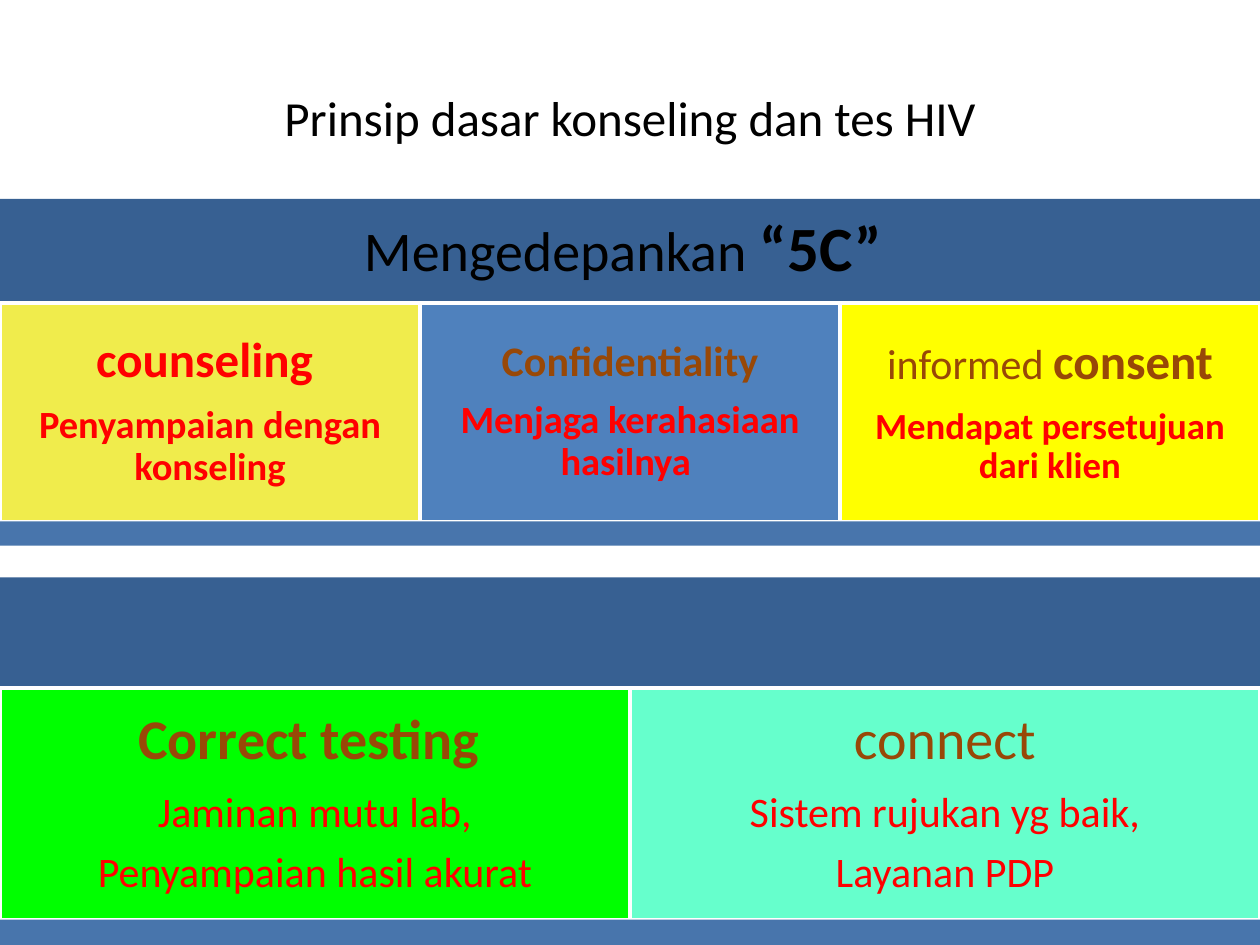
from typing import NamedTuple

from pptx import Presentation
from pptx.dml.color import RGBColor as Rgb
from pptx.enum.shapes import MSO_SHAPE as Kind
from pptx.enum.text import MSO_ANCHOR as Anchor, PP_ALIGN as Align
from pptx.util import Cm, Pt

WIDE, HIGH = 25.4, 19.05
FONT = "Calibri"
HUES = {
    "black": "000000", "white": "FFFFFF", "navy": "376092", "steel": "4875AC",
    "blue": "4F81BD", "straw": "F0EC4C", "yellow": "FFFF00", "green": "00FF00",
    "mint": "66FFCC", "brown": "984807", "red": "FF0000",
}


class Run(NamedTuple):
    text: str
    size: int
    hue: str
    bold: bool = False


class Card(NamedTuple):
    fill: str
    pad: float
    lines: list[list[Run]]


class Band(NamedTuple):
    top: float
    head: float
    body: float
    foot: float
    title: list[list[Run]]
    cards: list[Card]


BANDS = [
    Band(4.01, 2.1, 4.4, 0.49,
         [[Run("Mengedepankan ", 32, "black"), Run("“5C” ", 36, "black", True)]],
         [
             Card("straw", 0.3, [
                 [Run("counseling ", 28, "red", True)],
                 [Run("Penyampaian dengan konseling", 22, "red", True)]]),
             Card("blue", 0.25, [
                 [Run("Confidentiality", 24, "brown", True)],
                 [Run("Menjaga kerahasiaan hasilnya ", 22, "red", True)]]),
             Card("yellow", 0.25, [
                 [Run("informed ", 24, "brown"), Run("consent", 28, "brown", True)],
                 [Run("Mendapat persetujuan dari klien", 21, "red", True)]]),
         ]),
    Band(11.64, 2.23, 4.67, 0.51, [],
         [
             Card("green", 0.33, [
                 [Run("Correct testing ", 32, "brown", True)],
                 [Run("Jaminan mutu lab,", 24, "red")],
                 [Run("Penyampaian hasil akurat", 24, "red")]]),
             Card("mint", 0.33, [
                 [Run("connect", 32, "brown")],
                 [Run("Sistem rujukan yg baik,", 24, "red")],
                 [Run("Layanan PDP", 24, "red")]]),
         ]),
]


def color(hue: str) -> Rgb:
    return Rgb.from_string(HUES[hue])


def add_run(para, run: Run) -> None:
    part = para.add_run()
    part.text = run.text
    font = part.font
    font.name, font.size, font.bold = FONT, Pt(run.size), run.bold
    font.color.rgb = color(run.hue)


def write(frame, lines: list[list[Run]], pad: float) -> None:
    frame.word_wrap = True
    frame.vertical_anchor = Anchor.MIDDLE
    frame.margin_left = frame.margin_right = Cm(pad)
    frame.margin_top = frame.margin_bottom = Cm(pad)
    for i, line in enumerate(lines):
        para = frame.add_paragraph() if i else frame.paragraphs[0]
        para.alignment = Align.CENTER
        para.line_spacing = 0.9
        para.space_after = Pt(round(0.35 * max(run.size for run in line), 1))
        for run in line:
            add_run(para, run)


def add_box(slide, left: float, top: float, width: float, height: float,
            fill: str, edge: bool = False):
    box = slide.shapes.add_shape(
        Kind.RECTANGLE, Cm(left), Cm(top), Cm(width), Cm(height))
    box.shadow.inherit = False
    box.fill.solid()
    box.fill.fore_color.rgb = color(fill)
    if edge:
        box.line.color.rgb = color("white")
        box.line.width = Pt(2)
    else:
        box.line.fill.background()
    return box


def add_band(slide, band: Band) -> None:
    # Heading bar
    head = add_box(slide, 0, band.top, WIDE, band.head, "navy")
    if band.title:
        write(head.text_frame, band.title, 0.33)
    # Equal cards across the slide
    top = band.top + band.head
    width = WIDE / len(band.cards)
    for i, card in enumerate(band.cards):
        box = add_box(slide, i * width, top, width, band.body, card.fill, True)
        write(box.text_frame, card.lines, card.pad)
    # Closing strip
    add_box(slide, 0, top + band.body, WIDE, band.foot, "steel")


def main() -> None:
    deck = Presentation()
    deck.slide_width, deck.slide_height = Cm(WIDE), Cm(HIGH)
    slide = deck.slides.add_slide(deck.slide_layouts[5])

    # Title
    title = slide.shapes.title
    title.left, title.top = Cm(1.27), Cm(0.76)
    title.width, title.height = Cm(22.86), Cm(3.18)
    title.text_frame.vertical_anchor = Anchor.MIDDLE
    para = title.text_frame.paragraphs[0]
    para.alignment = Align.CENTER
    add_run(para, Run("Prinsip dasar konseling dan tes HIV", 28, "black"))

    # Principle bands
    for band in BANDS:
        add_band(slide, band)
    deck.save("out.pptx")


if __name__ == "__main__":
    main()
